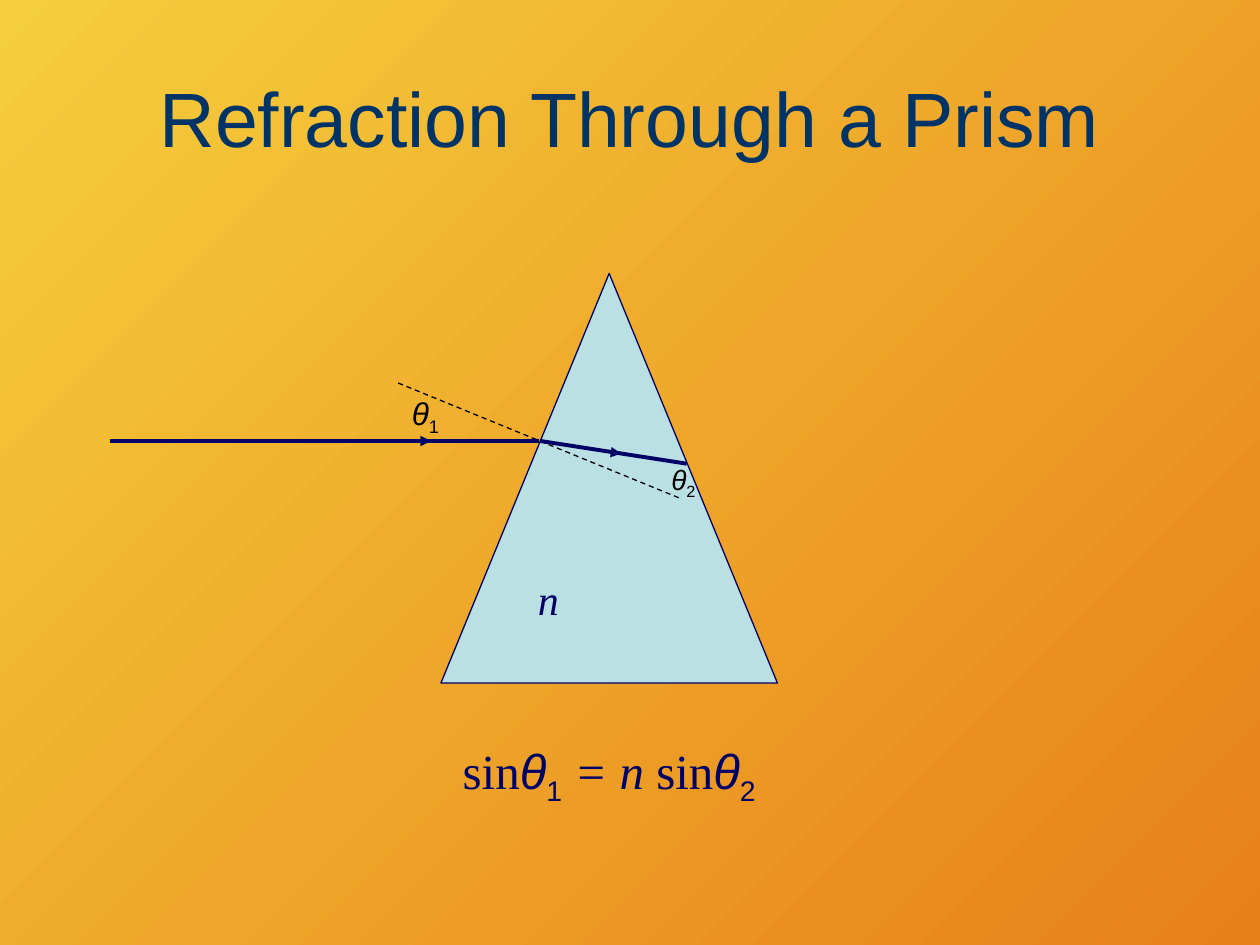
from lxml import etree
from pptx import Presentation
from pptx.dml.color import RGBColor
from pptx.enum.dml import MSO_LINE
from pptx.enum.shapes import MSO_CONNECTOR, MSO_SHAPE
from pptx.enum.text import MSO_ANCHOR, MSO_AUTO_SIZE, PP_ALIGN
from pptx.oxml.ns import qn
from pptx.util import Inches, Pt

STRAIGHT = MSO_CONNECTOR.STRAIGHT
TRIANGLE = MSO_SHAPE.ISOSCELES_TRIANGLE
DASH = MSO_LINE.DASH
MIDDLE, TOP = MSO_ANCHOR.MIDDLE, MSO_ANCHOR.TOP
CENTER, LEFT = PP_ALIGN.CENTER, PP_ALIGN.LEFT
GROW, FIXED = MSO_AUTO_SIZE.SHAPE_TO_FIT_TEXT, MSO_AUTO_SIZE.NONE

NAVY, BLACK, TITLE, GLASS = "000066", "000000", "003366", "BBE0E3"
SANS, SERIF = "Arial", "Times New Roman"


def tint(code):
    return RGBColor.from_string(code)


def theta(index):
    """Runs for an italic theta with a subscript number."""
    return [("θ", {"name": SANS, "italic": True}),
            (index, {"name": SANS, "sub": True})]


class Sketch:
    """Holds the slide and draws each kind of element on it."""

    def __init__(self, slide):
        self.slide = slide
        self.shapes = slide.shapes

    def backdrop(self, first, last):
        fill = self.slide.background.fill
        fill.gradient()
        fill.gradient_angle = 315
        for stop, code in zip(fill.gradient_stops, (first, last)):
            stop.color.rgb = tint(code)

    def prism(self, left, top, width, height):
        shape = self.shapes.add_shape(
            TRIANGLE, *map(Inches, (left, top, width, height)))
        shape.shadow.inherit = False
        shape.fill.solid()
        shape.fill.fore_color.rgb = tint(GLASS)
        shape.line.color.rgb = tint(NAVY)
        shape.line.width = Pt(0.75)

    def text(self, box, runs, size, color, align=LEFT, anchor=TOP, fit=GROW):
        shape = self.shapes.add_textbox(*map(Inches, box))
        frame = shape.text_frame
        looks = {"word_wrap": True, "auto_size": fit,
                 "vertical_anchor": anchor}
        for key, value in looks.items():
            setattr(frame, key, value)
        para = frame.paragraphs[0]
        para.alignment = align
        for words, style in runs:
            run = para.add_run()
            run.text = words
            run.font.color.rgb = tint(color)
            font = {"size": Pt(size), "italic": False, **style}
            if font.pop("sub", False):
                run._r.get_or_add_rPr().set("baseline", "-25000")
            for key, value in font.items():
                setattr(run.font, key, value)
        return shape

    def line(self, start, end, width, color=NAVY, dash=None, arrow=False):
        link = self.shapes.add_connector(
            STRAIGHT, *map(Inches, (*start, *end)))
        link.line.color.rgb = tint(color)
        link.line.width = Pt(width)
        if dash:
            link.line.dash_style = dash
        if arrow:
            tip = etree.SubElement(link.line._get_or_add_ln(), qn("a:tailEnd"))
            tip.set("type", "triangle")
        etree.SubElement(link._element.spPr, qn("a:effectLst"))
        return link

    def ray(self, start, end, mark, tip, thin):
        """A thick ray with an arrowhead part of the way along it."""
        self.group(self.line(start, end, 2.25),
                   self.line(mark, tip, thin, arrow=True))

    def group(self, *parts):
        self.shapes.add_group_shape(parts)


def main():
    deck = Presentation()
    deck.slide_width, deck.slide_height = Inches(10), Inches(7.5)
    sketch = Sketch(deck.slides.add_slide(deck.slide_layouts[6]))
    sketch.backdrop("F5CE3D", "E88018")

    sketch.prism(3.5, 2.17, 2.67, 3.25)
    sketch.text((4.17, 4.5, 0.33, 0.5),
                [("n", {"name": SERIF, "italic": True})], 24, NAVY, CENTER)
    sketch.text((0.5, 0.3, 9, 1.25),
                [("Refraction Through a Prism", {"name": SANS})],
                44, TITLE, CENTER, MIDDLE, FIXED)

    normal = sketch.line((3.16, 3.04), (5.41, 3.96), 0.75, BLACK, DASH)
    label = sketch.text((3.17, 3.08, 0.5, 0.4), theta("1"), 18, BLACK)
    sketch.group(normal, label)
    sketch.text((5.23, 3.62, 0.47, 0.37), theta("2"), 16, BLACK)

    sine = ("sin", {"name": SERIF})
    equals = (" = n ", {"name": SERIF, "italic": True})
    sketch.text((3.5, 5.83, 2.67, 0.57),
                [sine, *theta("1"), equals, sine, *theta("2")],
                28, NAVY, CENTER)

    sketch.ray((0.87, 3.5), (4.28, 3.5), (2.83, 3.5), (3.42, 3.5), 0.5)
    sketch.ray((4.29, 3.5), (5.45, 3.68), (4.78, 3.58), (4.93, 3.6), 0.75)
    deck.save("out.pptx")


if __name__ == "__main__":
    main()
